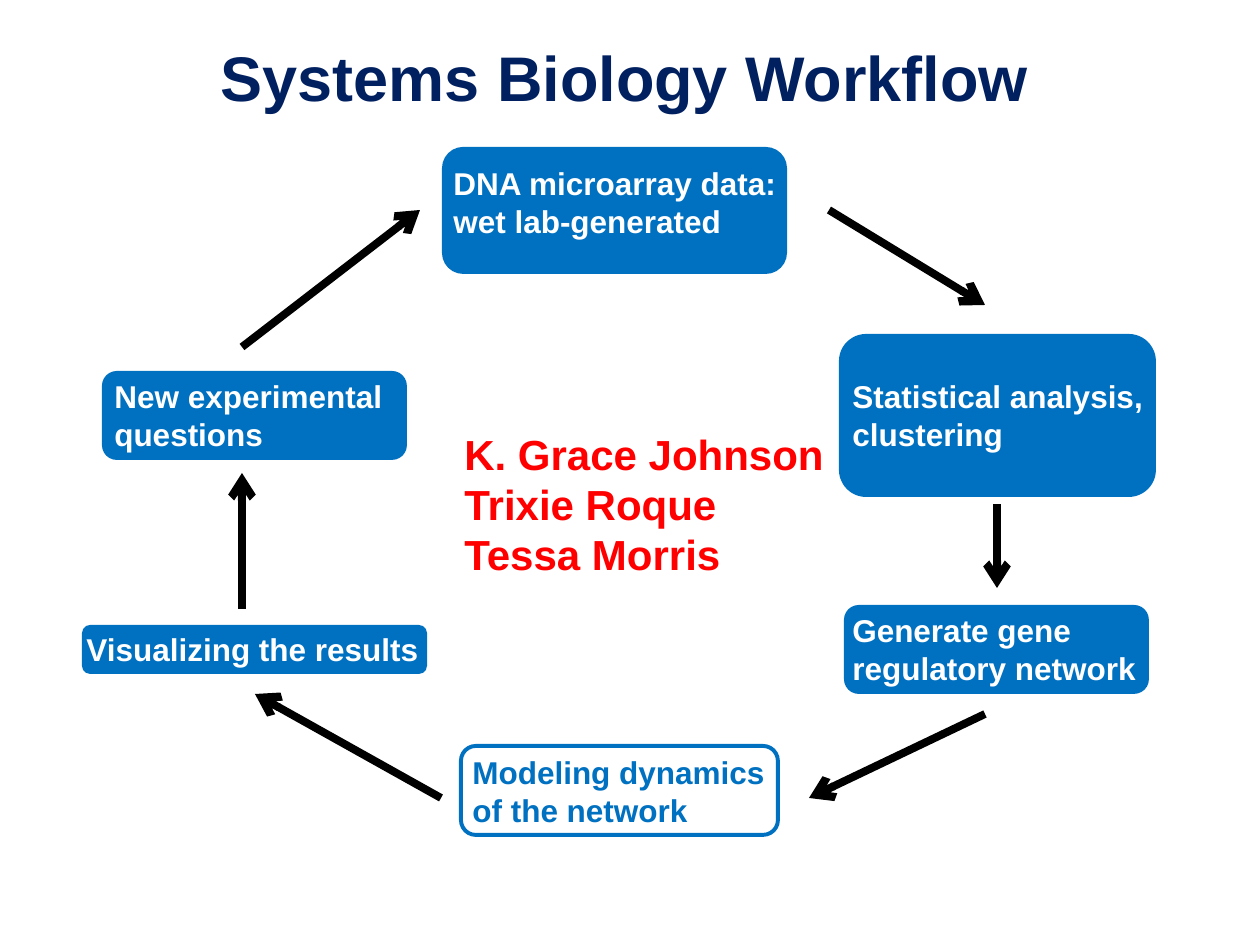
import lxml.etree
import pptx
import pptx.dml.color
import pptx.enum.shapes
import pptx.enum.text
import pptx.oxml.ns
import pptx.util

PX = 914400 / 126  # EMU per px
COLORS = {"navy": "002060", "blue": "0070C0", "white": "FFFFFF",
          "black": "000000", "red": "FF0000"}


def emu(*lengths):
    return [round(length * PX) for length in lengths]


def write(shape, lines, size, color, wrap=True):
    """Fill a shape with bold Arial, one paragraph per line."""
    frame = shape.text_frame
    frame.text = "\n".join(lines)
    frame.word_wrap = wrap
    frame.vertical_anchor = pptx.enum.text.MSO_ANCHOR.TOP
    for para in frame.paragraphs:
        para.font.name = "Arial"
        para.font.size = pptx.util.Pt(size)
        para.font.bold = True
        para.font.color.rgb = pptx.dml.color.RGBColor.from_string(COLORS[color])


deck = pptx.Presentation()
deck.slide_width, deck.slide_height = emu(1260, 945)
page = deck.slides.add_slide(deck.slide_layouts[5])
blue = pptx.dml.color.RGBColor.from_string(COLORS["blue"])
black = pptx.dml.color.RGBColor.from_string(COLORS["black"])

title = page.shapes.title
title.left, title.top, title.width, title.height = emu(136, 32, 977, 89)
write(title, ["Systems Biology Workflow"], 36, "navy")
title.text_frame.paragraphs[0].alignment = pptx.enum.text.PP_ALIGN.CENTER

# Each step: box, label box, label lines, filled, wrapped
steps = [
    ((442, 147, 345, 127), (441, 158, 357, 89),
     ["DNA microarray data:", "wet lab-generated"], True, True),
    ((839, 334, 317, 163), (840, 371, 318, 89),
     ["Statistical analysis,", "clustering"], True, True),
    ((844, 605, 305, 89), (840, 605, 325, 89),
     ["Generate gene regulatory network"], True, True),
    ((461, 746, 317, 89), (460, 747, 319, 89),
     ["Modeling dynamics of the network"], False, True),
    ((82, 625, 345, 49), (74, 624, 360, 50),
     ["Visualizing the results"], True, False),
    ((102, 371, 305, 89), (102, 371, 305, 89),
     ["New experimental questions"], True, True),
]
for box_area, label_area, lines, filled, wrap in steps:
    box = page.shapes.add_shape(
        pptx.enum.shapes.MSO_SHAPE.ROUNDED_RECTANGLE, *emu(*box_area))
    box.shadow.inherit = False
    if filled:
        box.fill.solid()
        box.fill.fore_color.rgb = blue
        box.line.fill.background()
    else:
        box.fill.background()
        box.line.color.rgb = blue
        box.line.width = pptx.util.Pt(2.25)
    label = page.shapes.add_textbox(*emu(*label_area))
    write(label, lines, 18, "white" if filled else "blue", wrap)

arrows = [
    (829, 210, 985, 305),
    (997, 504, 997, 588),
    (985, 714, 809, 798),
    (441, 798, 255, 694),
    (242, 609, 242, 473),
    (242, 347, 420, 210),
]
for ends in arrows:
    arrow = page.shapes.add_connector(
        pptx.enum.shapes.MSO_CONNECTOR.STRAIGHT, *emu(*ends))
    arrow.line.color.rgb = black
    arrow.line.width = pptx.util.Pt(4.5)
    lxml.etree.SubElement(arrow.line._get_or_add_ln(),
                          pptx.oxml.ns.qn("a:tailEnd"), type="arrow")
    lxml.etree.SubElement(arrow._element.spPr, pptx.oxml.ns.qn("a:effectLst"))

names = page.shapes.add_textbox(*emu(452, 422, 388, 165))
write(names, ["K. Grace Johnson", "Trixie Roque", "Tessa Morris"], 24, "red", False)

deck.save("out.pptx")
